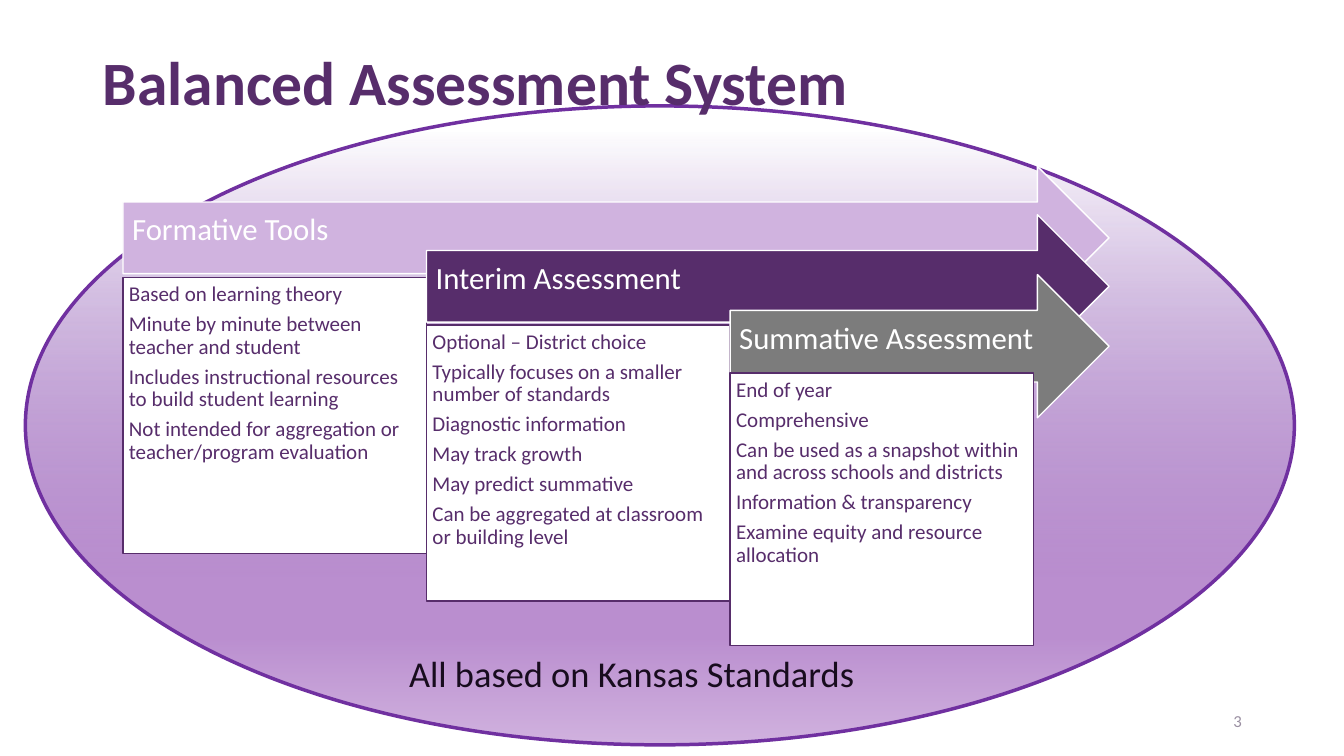
from lxml.etree import SubElement
from pptx import Presentation
from pptx.dml.color import RGBColor
from pptx.enum.shapes import MSO_SHAPE as Preset
from pptx.enum.text import MSO_ANCHOR as Anchor, PP_ALIGN as Align
from pptx.oxml.ns import qn
from pptx.util import Cm, Pt

COLORS = {
    "plum": "572D6B",
    "violet": "7030A0",
    "orchid": "BA8ECF",
    "lilac": "D0B3DF",
    "pale": "D1B3DF",
    "gray": "7C7C7C",
    "ink": "180C1E",
    "muted": "9A8FA2",
    "white": "FFFFFF",
}


def write(shape, lines, size, color, bold=False, align=Align.LEFT, anchor=Anchor.TOP,
          spacing=1.0, after=0, insets=(0.25, 0.13, 0.25, 0.13)):
    """Fill a shape with one paragraph per line; after is a share of the text size."""
    frame = shape.text_frame
    frame.word_wrap = True
    frame.vertical_anchor = anchor
    (frame.margin_left, frame.margin_top,
     frame.margin_right, frame.margin_bottom) = map(Cm, insets)
    for index, line in enumerate(lines):
        para = frame.add_paragraph() if index else frame.paragraphs[0]
        para.alignment = align
        para.line_spacing = spacing
        para.space_after = Pt(size * after)
        span = para.add_run()
        span.text = line
        span.font.name = "Calibri"
        span.font.size = Pt(size)
        span.font.bold = bold
        span.font.color.rgb = RGBColor.from_string(COLORS[color])
    return frame


def add_preset(preset, left, top, width, height, fill, line, weight):
    shape = page.shapes.add_shape(preset, Cm(left), Cm(top), Cm(width), Cm(height))
    shape.shadow.inherit = False
    shape.fill.solid()
    shape.fill.fore_color.rgb = RGBColor.from_string(COLORS[fill])
    shape.line.color.rgb = RGBColor.from_string(COLORS[line])
    shape.line.width = Pt(weight)
    return shape


deck = Presentation()
deck.slide_width, deck.slide_height = Cm(33.87), Cm(19.05)
page = deck.slides.add_slide(deck.slide_layouts[6])

# Ellipse fading from clear at the top to purple
ellipse = add_preset(Preset.OVAL, 0.64, 2.67, 31.98, 16.1, "white", "violet", 2.5)
ellipse.fill.gradient()
ellipse.fill.gradient_angle = 270
stops = ellipse._element.spPr.find(qn("a:gradFill")).find(qn("a:gsLst"))
for stop in list(stops):
    stops.remove(stop)
for percent, color, opacity in [(4, "violet", 0), (74, "orchid", 100),
                                (83, "orchid", 100), (100, "pale", 100)]:
    stop = SubElement(stops, qn("a:gs"), pos=str(percent * 1000))
    tint = SubElement(stop, qn("a:srgbClr"), val=COLORS[color])
    if opacity < 100:
        SubElement(tint, qn("a:alpha"), val=str(opacity * 1000))

# Title with a thin white outline
title = page.shapes.add_textbox(Cm(2.34), Cm(1.02), Cm(29.21), Cm(2.26))
frame = write(title, ["Balanced Assessment System"], 44, "plum", bold=True,
              anchor=Anchor.MIDDLE, spacing=0.9)
props = frame.paragraphs[0].runs[0].font._element
outline = SubElement(props, qn("a:ln"), w=str(Pt(0.75)))
SubElement(SubElement(outline, qn("a:solidFill")), qn("a:srgbClr"), val=COLORS["white"])
props.insert(0, outline)

# Stepped arrows that end on one line, each with a card below its label
FIRST_LEFT, CARD_WIDTH, ARROW_END, ARROW_HEIGHT = 3.1, 7.65, 27.95, 3.61
stages = [
    ("Formative Tools", "lilac", 4.19, 6.99, 6.96, [
        "Based on learning theory",
        "Minute by minute between teacher and student",
        "Includes instructional resources to build student learning",
        "Not intended for aggregation or teacher/program evaluation",
    ]),
    ("Interim Assessment", "plum", 5.41, 8.19, 6.96, [
        "Optional – District choice",
        "Typically focuses on a smaller number of standards",
        "Diagnostic information",
        "May track growth",
        "May predict summative",
        "Can be aggregated at classroom or building level",
    ]),
    ("Summative Assessment", "gray", 6.92, 9.4, 6.86, [
        "End of year",
        "Comprehensive",
        "Can be used as a snapshot within and across schools and districts",
        "Information & transparency",
        "Examine equity and resource allocation",
    ]),
]
for index, (label, color, arrow_top, card_top, card_height, points) in enumerate(stages):
    left = FIRST_LEFT + index * CARD_WIDTH
    arrow = add_preset(Preset.RIGHT_ARROW, left, arrow_top, ARROW_END - left,
                       ARROW_HEIGHT, color, "white", 1)
    write(arrow, [label], 22, "white", anchor=Anchor.MIDDLE, spacing=0.9, after=0.35,
          insets=(0.23, 0.23, 0.7, 0.58))
    card = add_preset(Preset.RECTANGLE, left, card_top, CARD_WIDTH, card_height,
                      "white", "plum", 1)
    write(card, points, 15, "plum", spacing=0.9, after=0.35, insets=(0.15,) * 4)

basis = page.shapes.add_textbox(Cm(10.06), Cm(16.28), Cm(13.16), Cm(1.37))
write(basis, ["All based on Kansas Standards"], 26, "ink")

number = page.shapes.add_textbox(Cm(23.93), Cm(17.65), Cm(7.62), Cm(1.02))
write(number, ["3"], 12, "muted", align=Align.RIGHT, anchor=Anchor.MIDDLE)

deck.save("out.pptx")
